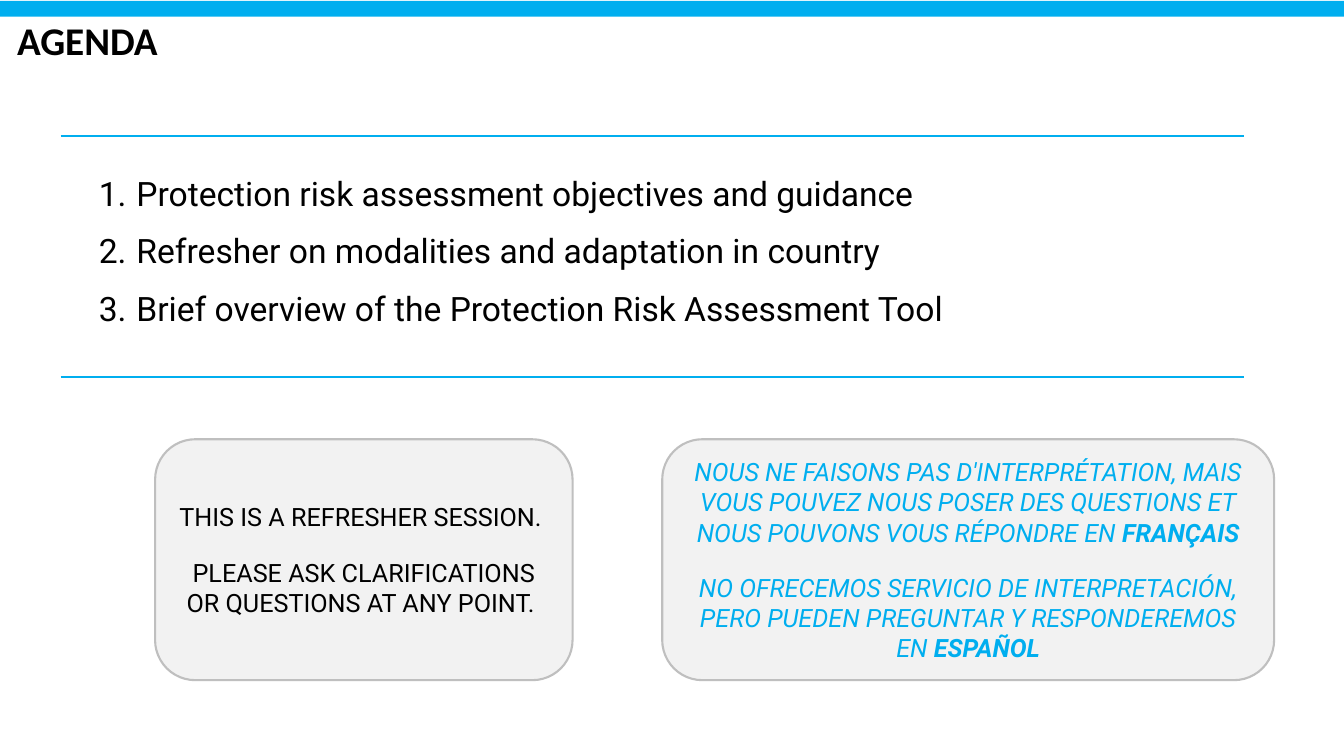
from lxml.etree import SubElement
from pptx import Presentation
from pptx.dml.color import RGBColor
from pptx.enum.shapes import MSO_CONNECTOR, MSO_SHAPE
from pptx.enum.text import MSO_ANCHOR, PP_ALIGN
from pptx.oxml.ns import qn
from pptx.util import Cm, Pt

COLORS = {"blue": "00AEEF", "black": "000000", "pale": "F2F2F2", "gray": "BFBFBF"}


class Deck:
    font = "Roboto"

    def __init__(self):
        self.file = Presentation()
        self.file.slide_width = Cm(33.87)
        self.file.slide_height = Cm(19.05)
        self.slide = self.file.slides.add_slide(self.file.slide_layouts[5])

    def color(self, name):
        return RGBColor.from_string(COLORS[name])

    def place(self, shape, box):
        shape.left, shape.top, shape.width, shape.height = map(Cm, box)

    def style(self, para, size, color="black", name=None):
        para.font.size = Pt(size)
        para.font.name = name or self.font
        para.font.color.rgb = self.color(color)

    def title(self, text, box):
        shape = self.slide.shapes.title
        self.place(shape, box)
        frame = shape.text_frame
        frame.margin_left = 0
        frame.vertical_anchor = MSO_ANCHOR.TOP
        frame.text = text
        para = frame.paragraphs[0]
        para.alignment = PP_ALIGN.LEFT
        self.style(para, 28, name="Calibri")
        para.font.bold = True

    def shape(self, kind, box, fill, line=None):
        shape = self.slide.shapes.add_shape(kind, *map(Cm, box))
        shape.shadow.inherit = False
        shape.fill.solid()
        shape.fill.fore_color.rgb = self.color(fill)
        if line:
            shape.line.color.rgb = self.color(line)
            shape.line.width = Pt(1.5)
        else:
            shape.line.fill.background()
        return shape

    def rule(self, left, right, top):
        line = self.slide.shapes.add_connector(
            MSO_CONNECTOR.STRAIGHT, Cm(left), Cm(top), Cm(right), Cm(top))
        line.line.color.rgb = self.color("blue")
        line.line.width = Pt(1.5)
        SubElement(line._element.spPr, qn("a:effectLst"))

    def agenda(self, items, box):
        frame = self.slide.shapes.add_textbox(*map(Cm, box)).text_frame
        frame.word_wrap = True
        for i, item in enumerate(items):
            para = frame.paragraphs[0] if i == 0 else frame.add_paragraph()
            para.text = item
            props = para._p.get_or_add_pPr()
            props.set("marL", str(Cm(0.95)))
            props.set("indent", str(-Cm(0.95)))
            SubElement(props, qn("a:buFont"), typeface="+mj-lt")
            SubElement(props, qn("a:buAutoNum"), type="arabicPeriod")
            para.space_after = Pt(12)
            self.style(para, 24)

    def card(self, texts, box, color="black", italic=False):
        shape = self.shape(MSO_SHAPE.ROUNDED_RECTANGLE, box, "pale", "gray")
        frame = shape.text_frame
        frame.word_wrap = True
        frame.vertical_anchor = MSO_ANCHOR.MIDDLE
        for i, (text, strong) in enumerate(texts):
            para = frame.paragraphs[0] if i == 0 else frame.add_paragraph()
            para.alignment = PP_ALIGN.CENTER
            para.space_after = Pt(18)
            para.add_run().text = text
            if strong:
                run = para.add_run()
                run.text = strong
                run.font.bold = True
            self.style(para, 18, color)
            para.font.italic = italic


def main():
    deck = Deck()
    deck.shape(MSO_SHAPE.RECTANGLE, (0, 0.02, 33.87, 0.4), "blue")
    deck.title("AGENDA", (0.43, 0.28, 32.49, 1.45))
    deck.agenda([
        "Protection risk assessment objectives and guidance",
        "Refresher on modalities and adaptation in country",
        "Brief overview of the Protection Risk Assessment Tool",
    ], (2.24, 4.24, 24.71, 4.19))
    for top in (3.43, 9.5):
        deck.rule(1.53, 31.34, top)
    deck.card([
        ("THIS IS A REFRESHER SESSION. ", ""),
        ("PLEASE ASK CLARIFICATIONS OR QUESTIONS AT ANY POINT. ", ""),
    ], (3.91, 11.07, 10.52, 6.07))
    deck.card([
        ("NOUS NE FAISONS PAS D'INTERPRÉTATION, MAIS VOUS POUVEZ NOUS POSER "
         "DES QUESTIONS ET NOUS POUVONS VOUS RÉPONDRE EN ", "FRANÇAIS"),
        ("NO OFRECEMOS SERVICIO DE INTERPRETACIÓN, PERO PUEDEN PREGUNTAR "
         "Y RESPONDEREMOS EN ", "ESPAÑOL"),
    ], (16.69, 11.07, 15.42, 6.07), "blue", True)
    deck.file.save("out.pptx")


if __name__ == "__main__":
    main()
